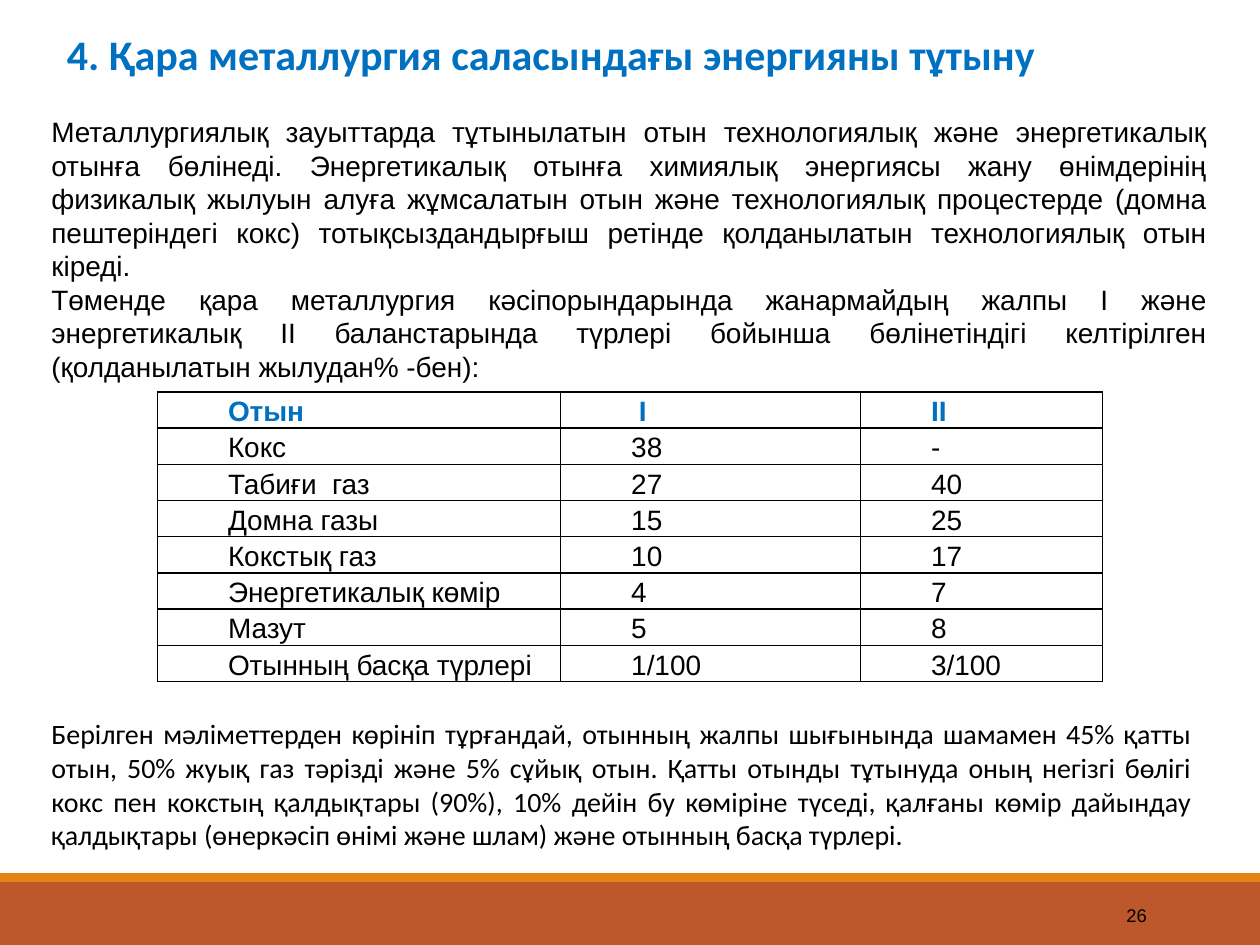
from lxml.etree import SubElement
from pptx import Presentation
from pptx.dml.color import RGBColor
from pptx.enum.shapes import MSO_SHAPE
from pptx.enum.text import MSO_ANCHOR, MSO_AUTO_SIZE, PP_ALIGN
from pptx.oxml.ns import qn
from pptx.util import Inches, Pt

BLACK = RGBColor(0x00, 0x00, 0x00)
BLUE = RGBColor(0x00, 0x70, 0xC0)
RUST = RGBColor(0xBD, 0x58, 0x2C)
ORANGE = RGBColor(0xE4, 0x83, 0x12)

BODY = {"size": Pt(16), "name": "Arial", "bold": False}
HEADER = {**BODY, "bold": True}
CLOSING = {**BODY, "name": "Calibri"}
TITLE = {"size": Pt(24), "name": "Calibri", "bold": True}
NUMBER = {**BODY, "size": Pt(10.5)}

INTRO_TEXT = [
    "Металлургиялық зауыттарда тұтынылатын отын технологиялық және энергетикалық "
    "отынға бөлінеді. Энергетикалық отынға химиялық энергиясы жану өнімдерінің "
    "физикалық жылуын алуға жұмсалатын отын және технологиялық процестерде (домна "
    "пештеріндегі кокс) тотықсыздандырғыш ретінде қолданылатын технологиялық отын "
    "кіреді.",
    "Төменде қара металлургия кәсіпорындарында жанармайдың жалпы I және "
    "энергетикалық II баланстарында түрлері бойынша бөлінетіндігі келтірілген "
    "(қолданылатын жылудан% -бен):",
]
CLOSING_TEXT = [
    "Берілген мәліметтерден көрініп тұрғандай, отынның жалпы шығынында шамамен 45% "
    "қатты отын, 50% жуық газ тәрізді және 5% сұйық отын. Қатты отынды тұтынуда оның "
    "негізгі бөлігі кокс пен кокстың қалдықтары (90%), 10% дейін бу көміріне түседі, "
    "қалғаны көмір дайындау қалдықтары (өнеркәсіп өнімі және шлам) және отынның басқа "
    "түрлері.",
]
FUEL_ROWS = [
    ("Отын", " І", "ІІ"),
    ("Кокс", "38", "-"),
    ("Табиғи  газ", "27", "40"),
    ("Домна газы", "15", "25"),
    ("Кокстық газ", "10", "17"),
    ("Энергетикалық көмір", "4", "7"),
    ("Мазут", "5", "8"),
    ("Отынның басқа түрлері", "1/100", "3/100"),
]
FUEL_WIDTHS = (3.2, 2.38, 1.92)


def style_font(font, values, color):
    """Apply a dict of font values and a colour."""
    for key, value in values.items():
        setattr(font, key, value)
    font.color.rgb = color


def fill_text(frame, lines, align, values, color=BLACK, anchor=MSO_ANCHOR.TOP):
    """Write the lines as paragraphs of a wrapping frame."""
    frame.word_wrap = True
    frame.auto_size = MSO_AUTO_SIZE.NONE
    frame.vertical_anchor = anchor
    frame.text = "\n".join(lines)
    for paragraph in frame.paragraphs:
        paragraph.alignment = align
        style_font(paragraph.font, values, color)


def add_title(slide, box):
    """Move and format the title placeholder."""
    title = slide.shapes.title
    title.left, title.top, title.width, title.height = map(Inches, box)
    heading = ["4. Қара металлургия саласындағы энергияны тұтыну"]
    fill_text(title.text_frame, heading, PP_ALIGN.LEFT, TITLE, BLUE)


def add_text(slide, box, lines, values, align=PP_ALIGN.JUSTIFY, anchor=MSO_ANCHOR.TOP):
    """Add a text box with the given paragraphs."""
    passage = slide.shapes.add_textbox(*map(Inches, box))
    fill_text(passage.text_frame, lines, align, values, anchor=anchor)


def add_footer(slide, box):
    """Add the footer band, its upper stripe and the slide number."""
    left, top, width, height = box
    stripe = 0.07
    bands = [(top + stripe, height - stripe, RUST), (top, stripe, ORANGE)]
    for band_top, band_height, color in bands:
        band = slide.shapes.add_shape(
            MSO_SHAPE.RECTANGLE, *map(Inches, (left, band_top, width, band_height)))
        band.shadow.inherit = False
        band.fill.solid()
        band.fill.fore_color.rgb = color
        band.line.fill.background()
    number_box = (left + width - 1.88, top + 0.13, 1.08, 0.4)
    add_text(slide, number_box, ["26"], NUMBER, PP_ALIGN.RIGHT, MSO_ANCHOR.MIDDLE)


def add_borders(cell):
    """Draw a thin black line on each side of the cell."""
    properties = cell._tc.get_or_add_tcPr()
    for side in ("a:lnL", "a:lnR", "a:lnT", "a:lnB"):
        line = SubElement(properties, qn(side), w=str(Pt(1)))
        solid = SubElement(line, qn("a:solidFill"))
        SubElement(solid, qn("a:srgbClr"), val=str(BLACK))


def format_cell(cell, text, values, color):
    """Write one table cell with a first-line indent."""
    cell.margin_left = cell.margin_right = Inches(0.07)
    cell.margin_top = cell.margin_bottom = 0
    add_borders(cell)
    cell.fill.background()
    cell.text = text
    paragraph = cell.text_frame.paragraphs[0]
    paragraph.alignment = PP_ALIGN.JUSTIFY
    paragraph.line_spacing = 1.15
    paragraph._p.get_or_add_pPr().set("indent", str(Inches(0.49)))
    style_font(paragraph.font, values, color)


def add_fuel_table(slide, box):
    """Add the table of fuel shares."""
    table = slide.shapes.add_table(
        len(FUEL_ROWS), len(FUEL_WIDTHS), *map(Inches, box)).table
    table.horz_banding = False
    for column, width in zip(table.columns, FUEL_WIDTHS):
        column.width = Inches(width)
    for r, shares in enumerate(FUEL_ROWS):
        values, color = (BODY, BLACK) if r else (HEADER, BLUE)
        for c, text in enumerate(shares):
            format_cell(table.cell(r, c), text, values, color)


def main():
    """Build the slide and save it."""
    deck = Presentation()
    deck.slide_width, deck.slide_height = Inches(10), Inches(7.5)
    slide = deck.slides.add_slide(deck.slide_layouts[5])
    add_footer(slide, (0, 6.93, 10, 0.57))
    add_text(slide, (0.31, 0.86, 9.37, 2.26), INTRO_TEXT, BODY)
    add_title(slide, (0.43, 0.18, 9.76, 0.91))
    add_fuel_table(slide, (1.25, 3.11, 7.5, 2.3))
    add_text(slide, (0.31, 5.64, 9.25, 1.18), CLOSING_TEXT, CLOSING)
    deck.save("out.pptx")


if __name__ == "__main__":
    main()
